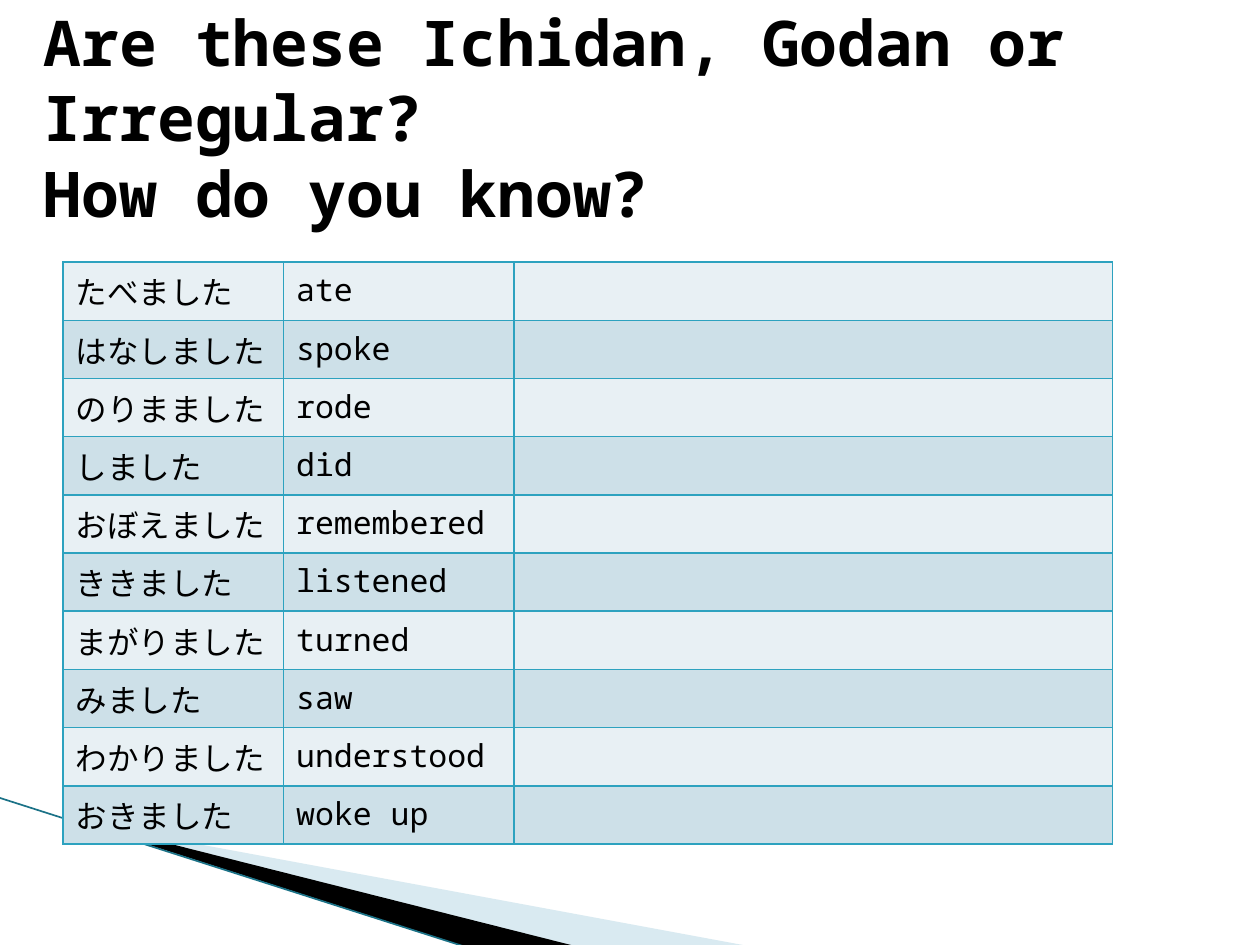
from dataclasses import dataclass

from lxml.etree import SubElement
from pptx import Presentation
from pptx.dml.color import RGBColor
from pptx.enum.shapes import MSO_CONNECTOR
from pptx.enum.text import MSO_ANCHOR
from pptx.oxml.ns import qn
from pptx.util import Inches, Pt


@dataclass(frozen=True)
class Theme:
    font: str = "Noto Sans Mono"
    ink: str = "000000"
    pale_wedge: str = "A0CBDC"
    edge: str = "1B7287"
    border: str = "2DA2BF"
    bands: tuple = ("E8F0F4", "CDE0E8")
    title_size: int = 36
    body_size: int = 18
    edge_width: float = 0.95
    border_width: int = 1


THEME = Theme()

VERBS = [
    ("たべました", "ate"),
    ("はなしました", "spoke"),
    ("のりまました", "rode"),
    ("しました", "did"),
    ("おぼえました", "remembered"),
    ("ききました", "listened"),
    ("まがりました", "turned"),
    ("みました", "saw"),
    ("わかりました", "understood"),
    ("おきました", "woke up"),
]


def style_text(text_frame, size, bold=False):
    for paragraph in text_frame.paragraphs:
        for run in paragraph.runs:
            run.font.name = THEME.font
            run.font.size = Pt(size)
            run.font.bold = bold
            run.font.color.rgb = RGBColor.from_string(THEME.ink)


def add_wedge(slide, left, top, points, color, opacity=100):
    corners = [(Inches(left + x), Inches(top + y)) for x, y in points]
    builder = slide.shapes.build_freeform(*corners[0])
    builder.add_line_segments(corners[1:], close=True)
    wedge = builder.convert_to_shape()
    wedge.shadow.inherit = False
    wedge.line.fill.background()
    wedge.fill.solid()
    wedge.fill.fore_color.rgb = RGBColor.from_string(color)
    if opacity < 100:
        tint = wedge.fill._xPr.find(f".//{qn('a:srgbClr')}")
        SubElement(tint, qn("a:alpha"), val=str(opacity * 1000))


def add_corner(slide, left, top, width, height):
    add_wedge(slide, left, top,
              [(0.56, 0.18), (width, height), (4.57, height), (0.56, 0.17)],
              THEME.pale_wedge, opacity=40)
    add_wedge(slide, left, top,
              [(0.54, 0.16), (4.58, height), (3.73, height + 0.01), (0.55, 0.17)],
              THEME.ink)
    edge = slide.shapes.add_connector(
        MSO_CONNECTOR.STRAIGHT, Inches(left), Inches(top),
        Inches(left + 3.72), Inches(top + height + 0.01))
    edge.line.color.rgb = RGBColor.from_string(THEME.edge)
    edge.line.width = Pt(THEME.edge_width)
    SubElement(edge._element.spPr, qn("a:effectLst"))


def add_title(slide, left, top, width, height):
    title = slide.shapes.add_textbox(
        Inches(left), Inches(top), Inches(width), Inches(height))
    title.text_frame.word_wrap = True
    title.text_frame.vertical_anchor = MSO_ANCHOR.MIDDLE
    title.text_frame.text = "Are these Ichidan, Godan or Irregular? \vHow do you know?"
    style_text(title.text_frame, THEME.title_size, bold=True)


def add_borders(cell):
    properties = cell._tc.get_or_add_tcPr()
    for position, side in enumerate(("lnL", "lnR", "lnT", "lnB")):
        line = SubElement(properties, qn(f"a:{side}"), w=str(Pt(THEME.border_width)))
        fill = SubElement(line, qn("a:solidFill"))
        SubElement(fill, qn("a:srgbClr"), val=THEME.border)
        properties.insert(position, line)


def add_verb_table(slide, left, top, width, height):
    verb_table = slide.shapes.add_table(
        len(VERBS), 3, Inches(left), Inches(top), Inches(width), Inches(height)).table
    verb_width, meaning_width = 1.75, 1.83
    widths = (verb_width, meaning_width, width - verb_width - meaning_width)
    for column, column_width in zip(verb_table.columns, widths):
        column.width = Inches(column_width)
    for index, (row, verb) in enumerate(zip(verb_table.rows, VERBS)):
        row.height = Inches(height / len(VERBS))
        for cell, words in zip(row.cells, (*verb, "")):
            cell.text = words
            style_text(cell.text_frame, THEME.body_size)
            cell.fill.solid()
            cell.fill.fore_color.rgb = RGBColor.from_string(THEME.bands[index % 2])
            add_borders(cell)


def main():
    presentation = Presentation()
    presentation.slide_width = Inches(10)
    presentation.slide_height = Inches(7.5)
    slide = presentation.slides.add_slide(presentation.slide_layouts[6])
    add_corner(slide, -0.01, 6.33, 5.96, 1.18)
    add_title(slide, 0.25, 0.3, 9.58, 1.25)
    add_verb_table(slide, 0.5, 2.08, 8.33, 4.62)
    presentation.save("out.pptx")


if __name__ == "__main__":
    main()
